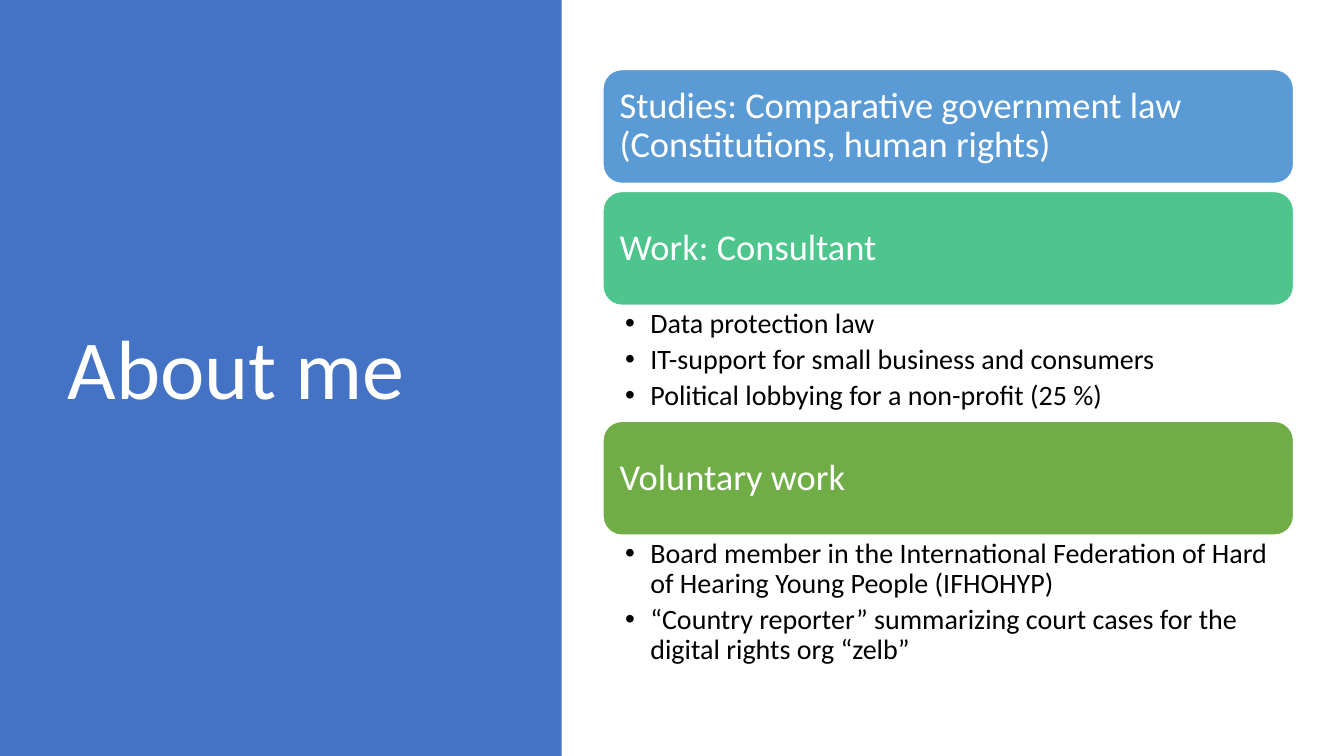
"""Build the "About me" slide: a title panel beside a stack of topic cards."""
from dataclasses import dataclass

from lxml.etree import SubElement
from pptx import Presentation
from pptx.dml.color import RGBColor
from pptx.enum.shapes import MSO_SHAPE as SHAPE
from pptx.enum.text import MSO_ANCHOR as ANCHOR, MSO_AUTO_SIZE as FIT, PP_ALIGN as ALIGN
from pptx.oxml.ns import qn
from pptx.util import Inches, Pt

FONT = "Calibri"
WHITE, BLACK, PANEL = "FFFFFF", "000000", "4472C4"
LEFT, TOP, WIDTH, CARD_H, GAP = 5.98, 0.69, 6.85, 1.13, 0.08


@dataclass(frozen=True)
class Topic:
    heading: str
    color: str
    points: tuple[str, ...] = ()
    points_h: float = GAP


TOPICS = (
    Topic("Studies: Comparative government law (Constitutions, human rights)", "5B9BD5"),
    Topic("Work: Consultant", "4DC58D", (
        "Data protection law",
        "IT-support for small business and consumers",
        "Political lobbying for a non-profit (25 %)",
    ), 1.15),
    Topic("Voluntary work", "70AD47", (
        "Board member in the International Federation of Hard of Hearing Young People (IFHOHYP)",
        "“Country reporter” summarizing court cases for the digital rights org “zelb”",
    ), 1.38),
)


def rgb(color: str) -> RGBColor:
    return RGBColor.from_string(color)


def box(left: float, top: float, width: float, height: float) -> tuple:
    return tuple(Inches(v) for v in (left, top, width, height))


def add_block(s, kind, place: tuple, color: str):
    sp = s.shapes.add_shape(kind, *place)
    sp.shadow.inherit = False
    sp.fill.solid()
    sp.fill.fore_color.rgb = rgb(color)
    return sp


def write(tf, lines: tuple[str, ...], size: int, color: str, anchor,
          margins: tuple, bullets: bool = False) -> None:
    left, top, right, bottom = (Inches(m) for m in margins)
    frame = {"word_wrap": True, "auto_size": FIT.NONE, "vertical_anchor": anchor,
             "margin_left": left, "margin_top": top,
             "margin_right": right, "margin_bottom": bottom}
    for name, value in frame.items():
        setattr(tf, name, value)
    for i, line in enumerate(lines):
        p = tf.add_paragraph() if i else tf.paragraphs[0]
        layout = {"alignment": ALIGN.LEFT, "line_spacing": 0.9,
                  "space_before": Pt(0), "space_after": Pt(4 if bullets else 0)}
        for name, value in layout.items():
            setattr(p, name, value)
        r = p.add_run()
        r.text = line
        for name, value in {"name": FONT, "size": Pt(size)}.items():
            setattr(r.font, name, value)
        r.font.color.rgb = rgb(color)
        if bullets:
            pPr = p._p.get_or_add_pPr()
            pPr.set("marL", str(Inches(0.25)))
            pPr.set("indent", str(Inches(-0.25)))
            SubElement(pPr, qn("a:buFont")).set("typeface", "Arial")
            SubElement(pPr, qn("a:buChar")).set("char", "•")


def add_title(s) -> None:
    panel = add_block(s, SHAPE.RECTANGLE, box(0, 0, 5.57, 7.5), PANEL)
    panel.line.fill.background()
    title = s.shapes.title
    title.left, title.top, title.width, title.height = box(0.57, 0.68, 4.16, 6.02)
    write(title.text_frame, ("About me",), 60, WHITE, ANCHOR.MIDDLE, (0.1, 0.05, 0.1, 0.05))
    panel.element.addnext(title.element)


def add_topic(s, topic: Topic, top: float) -> float:
    card = add_block(s, SHAPE.ROUNDED_RECTANGLE, box(LEFT, top, WIDTH, CARD_H), topic.color)
    card.line.color.rgb = rgb(WHITE)
    card.line.width = Pt(1)
    write(card.text_frame, (topic.heading,), 26, WHITE, ANCHOR.MIDDLE, (0.11,) * 4)
    top += CARD_H
    if topic.points:
        tb = s.shapes.add_textbox(*box(LEFT, top, WIDTH, topic.points_h))
        write(tb.text_frame, topic.points, 20, BLACK, ANCHOR.TOP,
              (0.22, 0.04, 0.2, 0.04), bullets=True)
    return top + topic.points_h


def main() -> None:
    prs = Presentation()
    prs.slide_width, prs.slide_height = Inches(13.33), Inches(7.5)
    s = prs.slides.add_slide(prs.slide_layouts.get_by_name("Title Only"))
    add_title(s)
    top = TOP
    for topic in TOPICS:
        top = add_topic(s, topic, top)
    prs.save("out.pptx")


if __name__ == "__main__":
    main()
